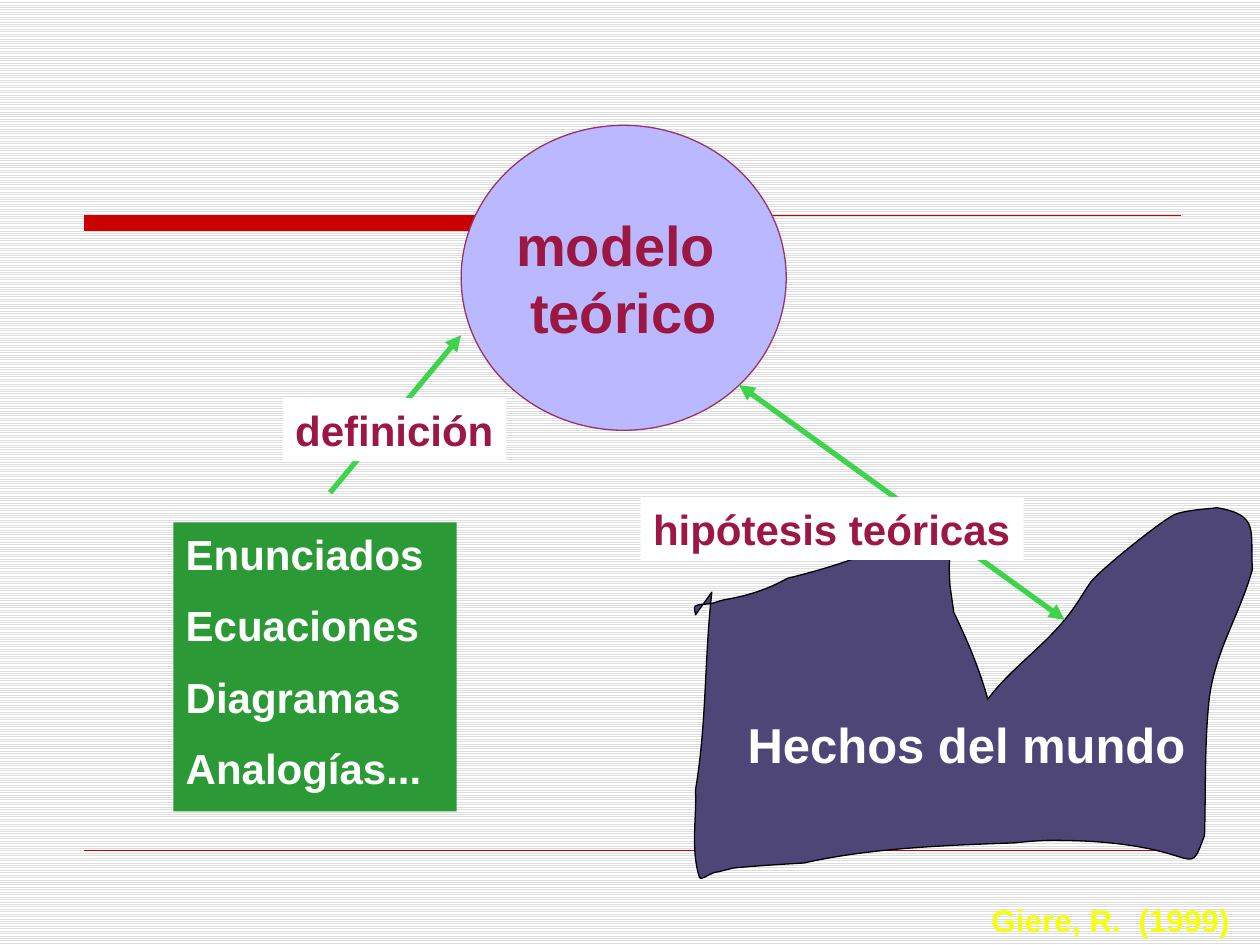
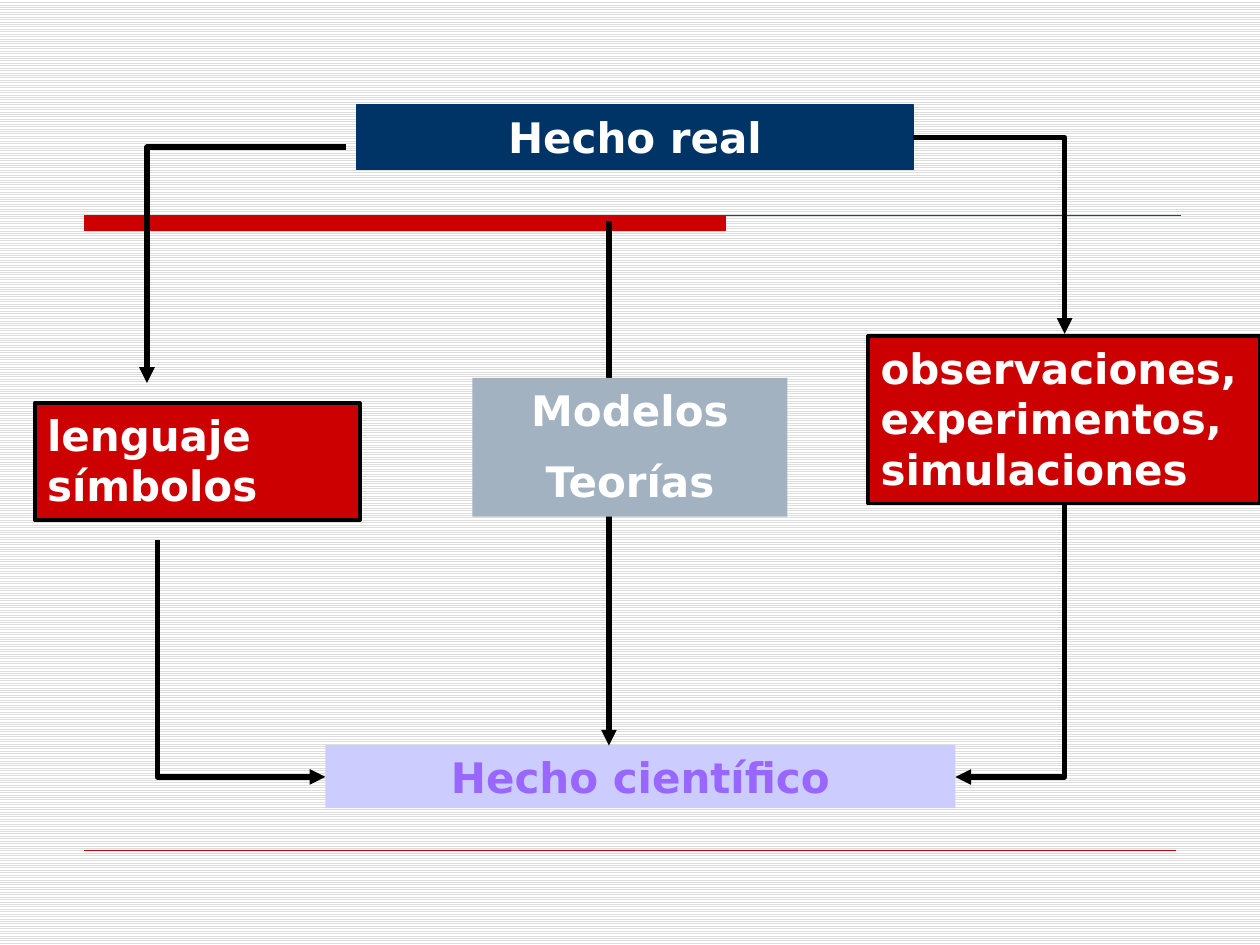
from copy import deepcopy

from lxml import etree
from pptx import Presentation
from pptx.dml.color import RGBColor
from pptx.enum.dml import MSO_PATTERN
from pptx.enum.shapes import MSO_CONNECTOR as Link, MSO_SHAPE as Preset
from pptx.enum.text import MSO_ANCHOR as Anchor, PP_ALIGN as Align
from pptx.oxml.ns import qn
from pptx.util import Inches, Pt

COLORS = {
    "white": "FFFFFF", "black": "000000", "stripe": "DDDDDD", "red": "CC0000",
    "green": "2B9A36", "arrow": "3DD44C", "lilac": "BAB8FF", "plum": "993366",
    "wine": "9C1742", "slate": "4D4677", "yellow": "F5FF0A", "navy": "003366",
    "lavender": "CCCCFF", "violet": "9966FF", "steel": "A3B2C1",
}
COLUMNS, ROWS = 100, 75

WORLD_START = (56.5, 47)
WORLD_CURVES = [
    ((55.9, 52.2), (56.1, 57.4), (55.2, 62.7)),
    ((55.3, 65), (54.8, 67.3), (55.5, 69.6)),
    ((55.6, 70), (56.4, 69.2), (57, 69.2)),
    ((57.4, 69.1), (57.8, 69), (58.2, 68.9)),
    ((60.1, 68.7), (63.8, 68.5), (63.8, 68.5)),
    ((69.1, 67.3), (75, 67.1), (80.5, 66.9)),
    ((81.5, 66.8), (82.5, 66.7), (83.5, 66.7)),
    ((95.7, 66.7), (94.1, 70.3), (95.6, 66.3)),
    ((95.7, 62.9), (95.6, 59.5), (95.9, 56.2)),
    ((96.2, 52), (98.3, 49.1), (99.4, 45.2)),
    ((99.2, 42.1), (100, 40.9), (96.6, 40.3)),
    ((95.8, 40.4), (93.9, 40.5), (93.1, 40.9)),
    ((91.7, 41.7), (87, 45.5), (86.5, 46.3)),
    ((85.7, 47.5), (85.4, 48.1), (84.5, 49.2)),
    ((82.6, 51.5), (80.1, 53.2), (78.4, 55.5)),
    ((77.7, 53), (76.8, 50.9), (75.7, 48.6)),
    ((75.6, 47.9), (75.5, 47.2), (75.4, 46.5)),
    ((75, 41.3), (77, 42), (74.1, 41.4)),
    ((71, 43.4), (66.3, 45), (62.5, 45.9)),
    ((60.9, 46.8), (59.3, 47.3), (57.5, 47.6)),
    ((57.1, 47.7), (56.8, 47.8), (56.5, 47.9)),
    ((56, 48), (55.5, 47.9), (55.2, 48.1)),
    ((55, 48.2), (55.2, 48.6), (55.2, 48.8)),
]


def color(name):
    return RGBColor.from_string(COLORS[name])


def write_text(shape, text, font="Arial", size=24, ink="white", align=Align.LEFT,
               anchor=Anchor.TOP, wrap=True, gap=0):
    frame = shape.text_frame
    frame.word_wrap = wrap
    frame.vertical_anchor = anchor
    for index, line in enumerate(text.split("\n")):
        paragraph = frame.add_paragraph() if index else frame.paragraphs[0]
        paragraph.alignment = align
        paragraph.space_before = Pt(gap if index else 0)
        run = paragraph.add_run()
        run.text = line
        run.font.name = font
        run.font.size = Pt(size)
        run.font.bold = True
        run.font.color.rgb = color(ink)


def first_contour(shape):
    return next(shape._element.iter(qn("a:path")))


def bend_segments(contour, curve_count):
    segments = contour.findall(qn("a:lnTo"))
    for index in range(0, 3 * curve_count, 3):
        curve = etree.Element(qn("a:cubicBezTo"))
        segments[index].addprevious(curve)
        for segment in segments[index:index + 3]:
            curve.append(segment[0])
            contour.remove(segment)


class Deck:
    def __init__(self):
        self.presentation = Presentation()
        self.presentation.slide_width = Inches(10)
        self.presentation.slide_height = Inches(7.5)
        self.slide = None
        self.new_slide()
        self.dress_master()

    def place(self, column, row):
        return (round(column * self.presentation.slide_width / COLUMNS),
                round(row * self.presentation.slide_height / ROWS))

    def new_slide(self):
        self.slide = self.presentation.slides.add_slide(self.presentation.slide_layouts[6])

    def dress_master(self):
        master = self.presentation.slide_master
        fill = master.background.fill
        fill.patterned()
        fill.pattern = MSO_PATTERN.LIGHT_HORIZONTAL
        fill.fore_color.rgb = color("stripe")
        fill.back_color.rgb = color("white")
        for shape in (self.title_band(), self.line((6.7, 67.5), (93.3, 67.5), "red", 0.25)):
            master.shapes._spTree.append(shape._element)

    def title_band(self):
        builder = self.slide.shapes.build_freeform(*self.place(6.7, 17.1))
        builder.add_line_segments(
            [self.place(*point) for point in ((57.6, 17.1), (57.6, 18.3), (6.7, 18.3))])
        builder.move_to(*self.place(6.7, 17.1))
        builder.add_line_segments([self.place(93.7, 17.1)], close=False)
        shape = builder.convert_to_shape()
        self.paint(shape, "red", "red")
        bar = first_contour(shape)
        rule = deepcopy(bar)
        bar.addnext(rule)
        bar.set("stroke", "0")
        for part in bar[5:]:
            bar.remove(part)
        for part in rule[:5]:
            rule.remove(part)
        return shape

    def paint(self, shape, fill, border=None, width=0.75):
        shape.shadow.inherit = False
        shape.fill.solid()
        shape.fill.fore_color.rgb = color(fill)
        if border:
            shape.line.color.rgb = color(border)
            shape.line.width = Pt(width)
        else:
            shape.line.fill.background()

    def box(self, left, top, width, height, fill, text, preset=Preset.RECTANGLE,
            border=None, border_width=0.75, **style):
        shape = self.slide.shapes.add_shape(
            preset, *self.place(left, top), *self.place(width, height))
        self.paint(shape, fill, border, border_width)
        write_text(shape, text, **style)

    def label(self, left, top, width, height, text, **style):
        shape = self.slide.shapes.add_textbox(
            *self.place(left, top), *self.place(width, height))
        write_text(shape, text, **style)

    def outline(self, start, curves, fill, border):
        builder = self.slide.shapes.build_freeform(*self.place(*start))
        points = [point for curve in curves for point in curve] + [start]
        builder.add_line_segments([self.place(*point) for point in points])
        shape = builder.convert_to_shape()
        bend_segments(first_contour(shape), len(curves))
        self.paint(shape, fill, border)

    def line(self, start, end, ink, width=3, arrows=(), elbow=False):
        connector = self.slide.shapes.add_connector(
            Link.ELBOW if elbow else Link.STRAIGHT, *self.place(*start), *self.place(*end))
        connector.line.color.rgb = color(ink)
        connector.line.width = Pt(width)
        properties = connector._element.spPr
        if elbow:
            properties.find(qn("a:prstGeom")).set("prst", "bentConnector2")
        for arrow in arrows:
            etree.SubElement(properties.find(qn("a:ln")), qn(f"a:{arrow}"), type="triangle")
        etree.SubElement(properties, qn("a:effectLst"))
        return connector


def theoretical_model(deck):
    tag = dict(ink="wine", wrap=False)
    deck.box(13.75, 41.45, 22.5, 22.95, "green",
             "Enunciados\nEcuaciones\nDiagramas\nAnalogías...", gap=12)
    deck.box(36.6, 9.95, 25.8, 24.2, "lilac", "modelo \nteórico", preset=Preset.OVAL,
             border="plum", size=32, align=Align.CENTER, anchor=Anchor.MIDDLE, **tag)
    deck.line((26.2, 39.1), (36.6, 26.6), "arrow", arrows=["tailEnd"])
    deck.box(22.45, 31.6, 17.7, 5, "white", "definición", **tag)
    deck.outline(WORLD_START, WORLD_CURVES, "slate", "black")
    deck.box(58.35, 56.2, 36.8, 5.7, "slate", "Hechos del mundo", size=28, wrap=False)
    deck.line((58.65, 30.55), (84.5, 49.2), "arrow", arrows=["headEnd", "tailEnd"])
    deck.box(50.85, 39.45, 30.4, 5, "white", "hipótesis teóricas", **tag)
    deck.label(77.7, 71, 20.9, 4, "Giere, R.  (1999)", size=18, ink="yellow", wrap=False)


def scientific_fact(deck):
    deck.new_slide()
    plain = dict(font="DejaVu Sans")
    centred = dict(plain, align=Align.CENTER, gap=12)
    framed = dict(plain, border="black", border_width=2.25)
    deck.box(25.83, 59.15, 50, 5, "lavender", "Hecho científico", ink="violet", **centred)
    deck.box(68.9, 26.67, 31.1, 13.3, "red",
             "observaciones,\nexperimentos,\nsimulaciones", **framed)
    deck.box(2.75, 32, 25.8, 9.3, "red", "lenguaje\nsímbolos", **framed)
    deck.box(28.3, 8.33, 44.2, 5.1, "navy", "Hecho real", border="navy", **centred)
    for start, end, arrow in [
        ((27.5, 11.67), (11.67, 30.4), "tailEnd"),
        ((25.83, 61.67), (12.5, 42.85), "headEnd"),
        ((75.83, 61.67), (84.5, 40.1), "headEnd"),
        ((72.5, 10.9), (84.5, 26.5), "tailEnd"),
    ]:
        deck.line(start, end, "black", arrows=[arrow], elbow=True)
    deck.line((48.33, 17.5), (48.33, 59.17), "black", arrows=["tailEnd"])
    deck.box(37.5, 30, 25, 11, "steel", "Modelos\nTeorías", **centred)


def main():
    deck = Deck()
    theoretical_model(deck)
    scientific_fact(deck)
    deck.presentation.save("out.pptx")


if __name__ == "__main__":
    main()
